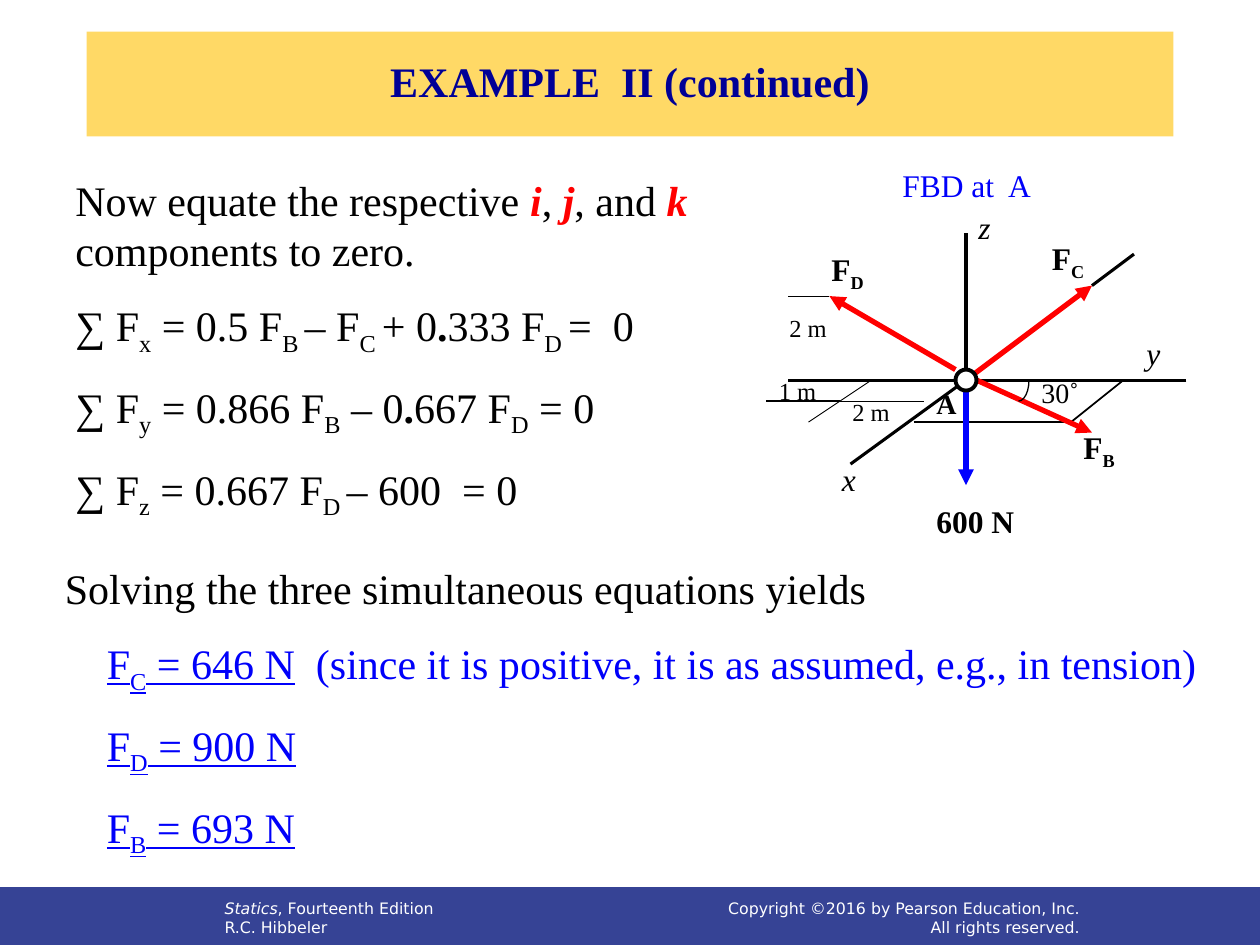
import dataclasses
import pptx
import pptx.util
import pptx.dml.color
import pptx.enum.shapes
import pptx.enum.text
import pptx.oxml.ns
import lxml.etree

SHAPE = pptx.enum.shapes.MSO_SHAPE
ALIGN = pptx.enum.text.PP_ALIGN
ANCHOR = pptx.enum.text.MSO_ANCHOR
Pt = pptx.util.Pt


@dataclasses.dataclass(frozen=True)
class Theme:
    serif: str = "Times New Roman"
    sans: str = "DejaVu Sans"
    black: str = "000000"
    white: str = "FFFFFF"
    red: str = "FF0000"
    blue: str = "0000FA"
    load: str = "0000FF"
    navy: str = "000096"
    gold: str = "FFD966"
    bar: str = "364395"
    body: int = 24
    label: int = 18
    angle: int = 16
    length: int = 14
    foot: int = 9
    gap: int = 14


T = Theme()
CELL = pptx.util.Inches(1) / 12
NODE = (92, 36.2)


def cells(*vals):
    return [round(v * CELL) for v in vals]


def near(x, y):
    return NODE[0] + x, NODE[1] + y


def rgb(hue):
    return pptx.dml.color.RGBColor.from_string(hue)


def tag(node, name, **attrs):
    return lxml.etree.SubElement(node, pptx.oxml.ns.qn(name), **attrs)


def style(run, marks, size, hue, face):
    font = run.font
    font.name, font.size = face, Pt(size)
    font.color.rgb = rgb(T.red if "r" in marks else hue)
    font.bold = "b" in marks
    font.italic = "i" in marks
    font.underline = "u" in marks
    if "s" in marks:
        run._r.get_or_add_rPr().set("baseline", "-25000")


def write(para, text, marks="-", size=T.body, hue=T.black, face=T.serif):
    for part, mark in zip(text.split("|"), marks.split(), strict=True):
        run = para.add_run()
        run.text = part
        style(run, mark, size, hue, face)


def panel(slide, box, lines, align=ALIGN.LEFT, anchor=ANCHOR.TOP, gap=0, **look):
    frame = slide.shapes.add_textbox(*cells(*box)).text_frame
    frame.word_wrap = True
    frame.vertical_anchor = anchor
    for row, (text, marks, *extra) in enumerate(lines):
        para = frame.add_paragraph() if row else frame.paragraphs[0]
        para.alignment = align
        if row and gap:
            para.space_before = Pt(gap)
        hue, inset = extra or (look.get("hue", T.black), 0)
        if inset:
            para._p.get_or_add_pPr().set("marL", str(cells(inset)[0]))
        write(para, text, marks, **{**look, "hue": hue})


def block(slide, kind, box, fill, line=None, width=0.5):
    shape = slide.shapes.add_shape(kind, *cells(*box))
    shape.shadow.inherit = False
    if fill:
        shape.fill.solid()
        shape.fill.fore_color.rgb = rgb(fill)
    else:
        shape.fill.background()
    if line:
        shape.line.color.rgb = rgb(line)
        shape.line.width = Pt(width)
    else:
        shape.line.fill.background()
    return shape


def stroke(slide, start, end, width, hue=T.black, arrow=False):
    kind = pptx.enum.shapes.MSO_CONNECTOR.STRAIGHT
    line = slide.shapes.add_connector(kind, *cells(*near(*start), *near(*end)))
    line.line.color.rgb = rgb(hue)
    line.line.width = Pt(width)
    if arrow:
        tag(line.line._get_or_add_ln(), "a:tailEnd", type="triangle")
    tag(line._element.spPr, "a:effectLst")


def title(slide):
    shape = block(slide, SHAPE.RECTANGLE, (8.25, 3, 103.5, 10), T.gold)
    frame = shape.text_frame
    frame.vertical_anchor = ANCHOR.MIDDLE
    para = frame.paragraphs[0]
    para.alignment = ALIGN.CENTER
    para.line_spacing = 0.9
    write(para, "EXAMPLE  II (continued)", "b", hue=T.navy)


def footer(slide):
    look = dict(size=T.foot, hue=T.white, face=T.sans)
    block(slide, SHAPE.RECTANGLE, (0, 84.5, 120, 5.5), T.bar, T.bar)
    panel(slide, (20.2, 85, 50, 4.8), [
        ("Statics|, Fourteenth Edition", "i -"),
        ("R.C. Hibbeler", "-")], **look)
    panel(slide, (56, 84.8, 48, 5.2), [
        ("Copyright ©2016 by Pearson Education, Inc.", "-"),
        ("All rights reserved.", "-")], ALIGN.RIGHT, ANCHOR.MIDDLE, **look)


def sums(slide):
    panel(slide, (6, 16, 66, 32.8), [
        ("Now equate the respective |i|, |j|, and |k |components to zero.",
         "- rbi - rbi - rbi -"),
        ("∑ F|x| = 0.5 F|B |– F|C |+ 0|.|333 F|D |=  0",
         "- s - s - s - b - s -"),
        ("∑ F|y| = 0.866 F|B| – 0|.|667 F|D| = 0", "- s - s - b - s -"),
        ("∑ F|z| = 0.667 F|D |– 600  = 0", "- s - s -")], gap=T.gap)


def answers(slide):
    force = "u us u"
    panel(slide, (5, 53, 111.4, 27.8), [
        ("Solving the three simultaneous equations yields", "-"),
        ("F|C| = 646 N|  (since it is positive, it is as assumed, e.g., in tension)",
         force + " -", T.blue, 4),
        ("F|D| = 900 N", force, T.blue, 4),
        ("F|B| = 693 N", force, T.blue, 4)], gap=T.gap)


def lines(slide):
    for start, end, width in (
            ((0, -14), (0, -1), 1.75),
            ((21, 0), (1, 0), 1.75),
            ((-1, 0), (-17, 0), 1.75),
            ((0, 0), (-11, 8), 1.75),
            ((12, -9), (16, -12), 1.75),
            ((-13, -8), (-17, -8), 0.5),
            ((-12, 2), (-19, 2), 0.75),
            ((-9, 0), (-15, 4), 0.5),
            ((-4, 2), (-19, 2), 0.5),
            ((-5, 4), (10, 4), 0.75),
            ((10, 4), (15, 0), 1)):
        stroke(slide, start, end, width)
    for start, end, hue in (
            ((0, 0), (12, -9), T.red),
            ((-1, -1), (-13, -8), T.red),
            ((1, 0), (12, 5), T.red),
            ((0, 1), (0, 10), T.load)):
        stroke(slide, start, end, 3, hue, True)
    arc = block(slide, SHAPE.ARC, (*near(4, -2), 2, 4), None, T.black, 0.75)
    arc.adjustments[0], arc.adjustments[1] = 0, 54
    block(slide, SHAPE.OVAL, (*near(-1, -1), 2, 2), T.white, T.black, 2.25)


def labels(slide):
    for x, y, wide, text, marks, size, hue in (
            (-7.25, -21, 16, "FBD at  A", "-", T.label, T.blue),
            (0, -17, 7, "z", "i", T.label, T.black),
            (16, -5, 7, "y", "i", T.label, T.black),
            (-13, 7, 7, "x", "i", T.label, T.black),
            (7, -14, 7, "F|C", "b bs", T.label, T.black),
            (-14, -13, 7, "F|D", "b bs", T.label, T.black),
            (10, 4, 7, "F|B", "b bs", T.label, T.black),
            (-4, 11, 23, "600 N", "b", T.label, T.black),
            (-4, 0, 5, "A", "b", T.angle, T.black),
            (6, -1, 6, "30˚", "-", T.angle, T.black),
            (-19, -1, 6, "1 m", "-", T.length, T.black),
            (-12, 1, 6, "2 m", "-", T.length, T.black),
            (-18, -7, 6, "2 m", "-", T.length, T.black)):
        panel(slide, (*near(x, y), wide, 4.8), [(text, marks)],
              size=size, hue=hue)


def main():
    deck = pptx.Presentation()
    deck.slide_width, deck.slide_height = cells(120, 90)
    slide = deck.slides.add_slide(deck.slide_layouts[6])
    for part in (footer, title, sums, answers, lines, labels):
        part(slide)
    deck.save("out.pptx")


if __name__ == "__main__":
    main()
